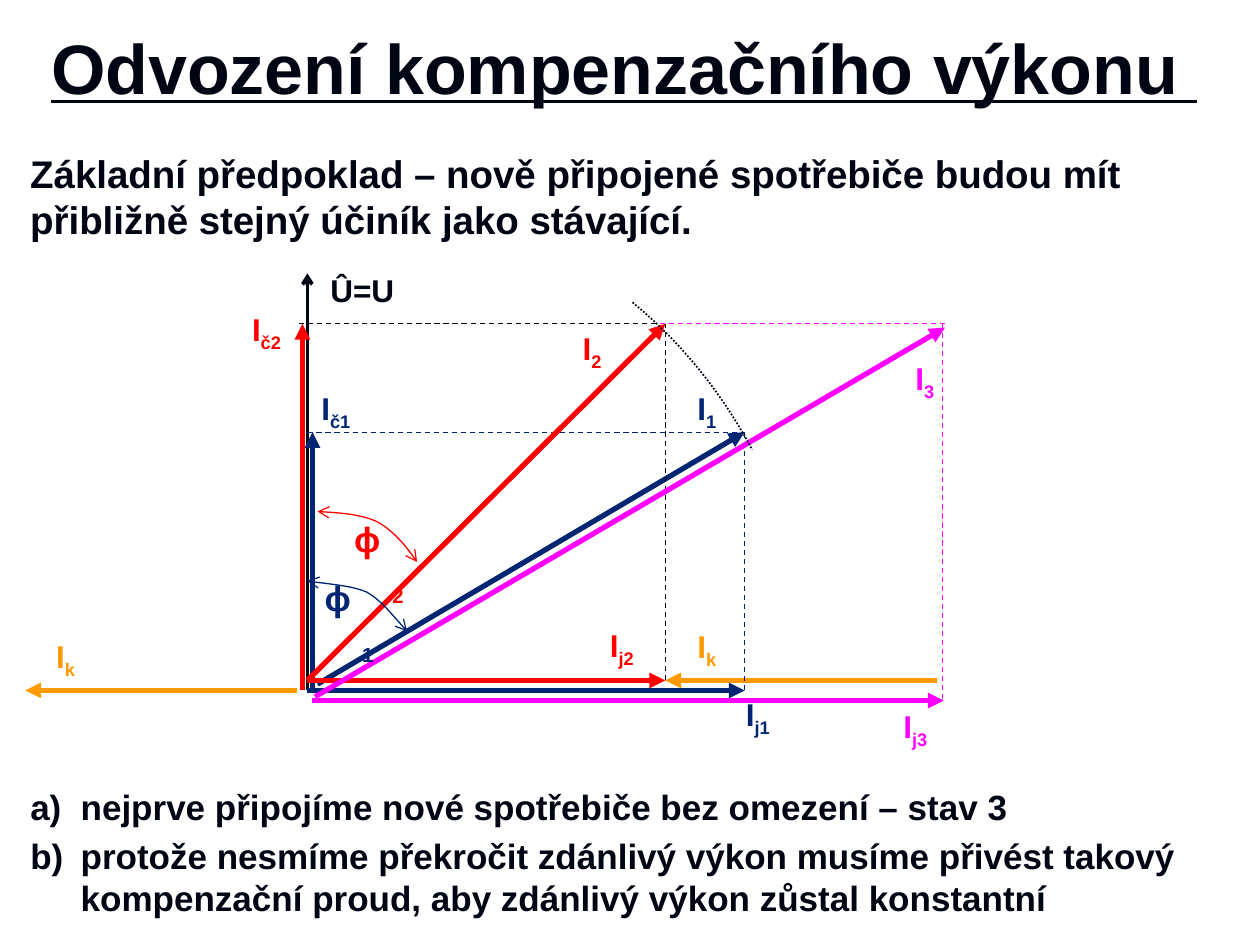
from pptx import Presentation
from pptx.dml.color import RGBColor
from pptx.enum.dml import MSO_LINE
from pptx.enum.shapes import MSO_CONNECTOR
from pptx.enum.text import MSO_ANCHOR, MSO_AUTO_SIZE, PP_ALIGN
from pptx.oxml.ns import qn
from pptx.util import Inches, Pt
from lxml import etree

STRAIGHT = MSO_CONNECTOR.STRAIGHT
DASH, DOT = MSO_LINE.DASH, MSO_LINE.ROUND_DOT
CENTER, LEFT = PP_ALIGN.CENTER, PP_ALIGN.LEFT
MIDDLE, GROW = MSO_ANCHOR.MIDDLE, MSO_AUTO_SIZE.SHAPE_TO_FIT_TEXT

COLORS = {"ink": "000514", "navy": "002673", "red": "FF0000",
          "magenta": "FF00FF", "orange": "FF9900"}


def style_line(shape, color, width, dash=None, head=None, tail=None):
    shape.line.color.rgb = RGBColor.from_string(COLORS[color])
    shape.line.width = Pt(width)
    if dash:
        shape.line.dash_style = dash
    properties = shape._element.spPr
    outline = properties.find(qn("a:ln"))
    for tag, kind in (("a:headEnd", head), ("a:tailEnd", tail)):
        if kind:
            etree.SubElement(outline, qn(tag), type=kind, w="med", len="med")
    if properties.find(qn("a:effectLst")) is None:
        outline.addnext(etree.Element(qn("a:effectLst")))


def write(paragraph, text, size, color, subscript="", align=LEFT, hanging=0, underline=None):
    paragraph.alignment = align
    if hanging:
        paragraph_format = paragraph._p.get_or_add_pPr()
        paragraph_format.set("marL", str(Inches(hanging)))
        paragraph_format.set("indent", str(-Inches(hanging)))
    font_format = {"name": "Arial", "size": Pt(size), "bold": True, "underline": underline}
    for content, baseline in ((text, None), (subscript, "-25000")):
        if content:
            run = paragraph.add_run()
            run.text = content
            for name, value in font_format.items():
                setattr(run.font, name, value)
            run.font.color.rgb = RGBColor.from_string(COLORS[color])
            if baseline:
                run.font._element.set("baseline", baseline)


presentation = Presentation()
presentation.slide_width, presentation.slide_height = Inches(10), Inches(7.5)
slide = presentation.slides.add_slide(presentation.slide_layouts[5])

title = slide.shapes.title
title_place = {"left": 0.27, "top": 0.21, "width": 9.37, "height": 0.63}
for name, value in title_place.items():
    setattr(title, name, Inches(value))
title.text_frame.vertical_anchor = MIDDLE
title.text_frame.auto_size = MSO_AUTO_SIZE.NONE
write(title.text_frame.paragraphs[0], "Odvození kompenzačního výkonu ", 40, "ink",
      align=CENTER, underline=True)

body_texts = [
    ((0.2, 1.15, 9.53, 0.81), 22, 0,
     ["Základní předpoklad – nově připojené spotřebiče budou mít přibližně stejný účiník jako stávající."]),
    ((0.2, 6.19, 9.29, 1.15), 20, 0.4,
     ["a)\tnejprve připojíme nové spotřebiče bez omezení – stav 3",
      "b)\tprotože nesmíme překročit zdánlivý výkon musíme přivést takový kompenzační proud, "
      "aby zdánlivý výkon zůstal konstantní"]),
]
for place, size, hanging, texts in body_texts:
    frame = slide.shapes.add_textbox(*map(Inches, place)).text_frame
    frame.word_wrap = True
    frame.auto_size = GROW
    for side in ("left", "right", "top", "bottom"):
        setattr(frame, "margin_" + side, Inches(0.04))
    for index, text in enumerate(texts):
        paragraph = frame.add_paragraph() if index else frame.paragraphs[0]
        paragraph.space_before = Pt(size * 0.2)
        write(paragraph, text, size, "ink", hanging=hanging)

phasor = {"width": 3, "tail": "triangle"}
axis = {"width": 2, "tail": "arrow"}
guide = {"width": 0.75, "dash": DASH}
lines = [
    ((7.44, 5.4, 5.28, 5.4), "orange", phasor),
    ((2.44, 5.48, 2.44, 2.17), "ink", axis),
    ((2.44, 5.48, 5.91, 5.48), "navy", phasor),
    ((2.48, 5.48, 2.48, 3.43), "navy", phasor),
    ((2.44, 3.43, 5.91, 3.43), "navy", guide),
    ((5.91, 5.48, 5.91, 3.43), "navy", guide),
    ((2.52, 5.43, 5.91, 3.43), "navy", phasor),
    ((5.28, 5.4, 5.28, 2.57), "ink", guide),
    ((2.44, 5.4, 5.28, 2.57), "red", phasor),
    ((2.4, 5.48, 2.4, 2.57), "red", phasor),
    ((5.28, 2.57, 2.36, 2.57), "ink", guide),
    ((2.44, 5.4, 5.28, 5.4), "red", phasor),
    ((2.5, 5.53, 7.5, 2.6), "magenta", phasor),
    ((5.24, 2.57, 7.52, 2.57), "magenta", guide),
    ((7.48, 2.57, 7.48, 5.56), "magenta", guide),
    ((2.48, 5.56, 7.49, 5.56), "magenta", phasor),
    ((2.36, 5.48, 0.2, 5.48), "orange", phasor),
]
for ends, color, line_format in lines:
    connector = slide.shapes.add_connector(STRAIGHT, *map(Inches, ends))
    style_line(connector, color, **line_format)

angle = {"width": 0.75, "head": "arrow", "tail": "arrow"}
curves = [
    ([(2.44, 4.61), (2.52, 4.63), (2.78, 4.64), (2.91, 4.7),
      (3.04, 4.77), (3.16, 4.94), (3.23, 5.01)], "navy", angle),
    ([(2.52, 4.06), (2.69, 4.07), (2.86, 4.08), (2.99, 4.14),
      (3.12, 4.21), (3.22, 4.33), (3.31, 4.46)], "red", angle),
    ([(5.02, 2.4), (5.41, 2.72), (5.73, 3.12), (5.97, 3.57)], "ink", {"width": 1, "dash": DOT}),
]
STEPS = 12
for controls, color, line_format in curves:
    points = []
    for first in range(0, len(controls) - 1, 3):
        for step in range(1, STEPS + 1):
            t = step / STEPS
            weights = ((1 - t) ** 3, 3 * t * (1 - t) ** 2, 3 * t * t * (1 - t), t ** 3)
            section = list(zip(weights, controls[first:first + 4]))
            points.append(tuple(Inches(sum(w * point[i] for w, point in section)) for i in (0, 1)))
    builder = slide.shapes.build_freeform(*map(Inches, controls[0]))
    builder.add_line_segments(points, close=False)
    curve = builder.convert_to_shape()
    curve.fill.background()
    curve.shadow.inherit = False
    style_line(curve, color, **line_format)

labels = [
    ("Û=U", "", "ink", 18, (2.52, 2.1, 0.71, 0.4)),
    ("I", "k", "orange", 18, (5.43, 4.93, 0.36, 0.4)),
    ("I", "k", "orange", 18, (0.34, 5.01, 0.36, 0.4)),
    ("I", "j1", "navy", 18, (5.81, 5.47, 0.41, 0.4)),
    ("I", "č1", "navy", 18, (2.44, 3.04, 0.45, 0.4)),
    ("I", "1", "navy", 18, (5.43, 3.04, 0.36, 0.4)),
    ("ϕ", "1", "navy", 20, (2.44, 4.53, 0.48, 0.44)),
    ("I", "j2", "red", 18, (4.73, 4.92, 0.41, 0.4)),
    ("I", "č2", "red", 18, (1.89, 2.41, 0.45, 0.4)),
    ("I", "2", "red", 18, (4.52, 2.56, 0.36, 0.4)),
    ("ϕ", "2", "red", 20, (2.68, 4.06, 0.47, 0.43)),
    ("I", "j3", "magenta", 18, (7.06, 5.56, 0.41, 0.4)),
    ("I", "3", "magenta", 18, (7.16, 2.8, 0.36, 0.4)),
]
for text, subscript, color, size, place in labels:
    frame = slide.shapes.add_textbox(*map(Inches, place)).text_frame
    frame.word_wrap = False
    frame.auto_size = GROW
    write(frame.paragraphs[0], text, size, color, subscript, CENTER, hanging=0.38)

presentation.save("out.pptx")
